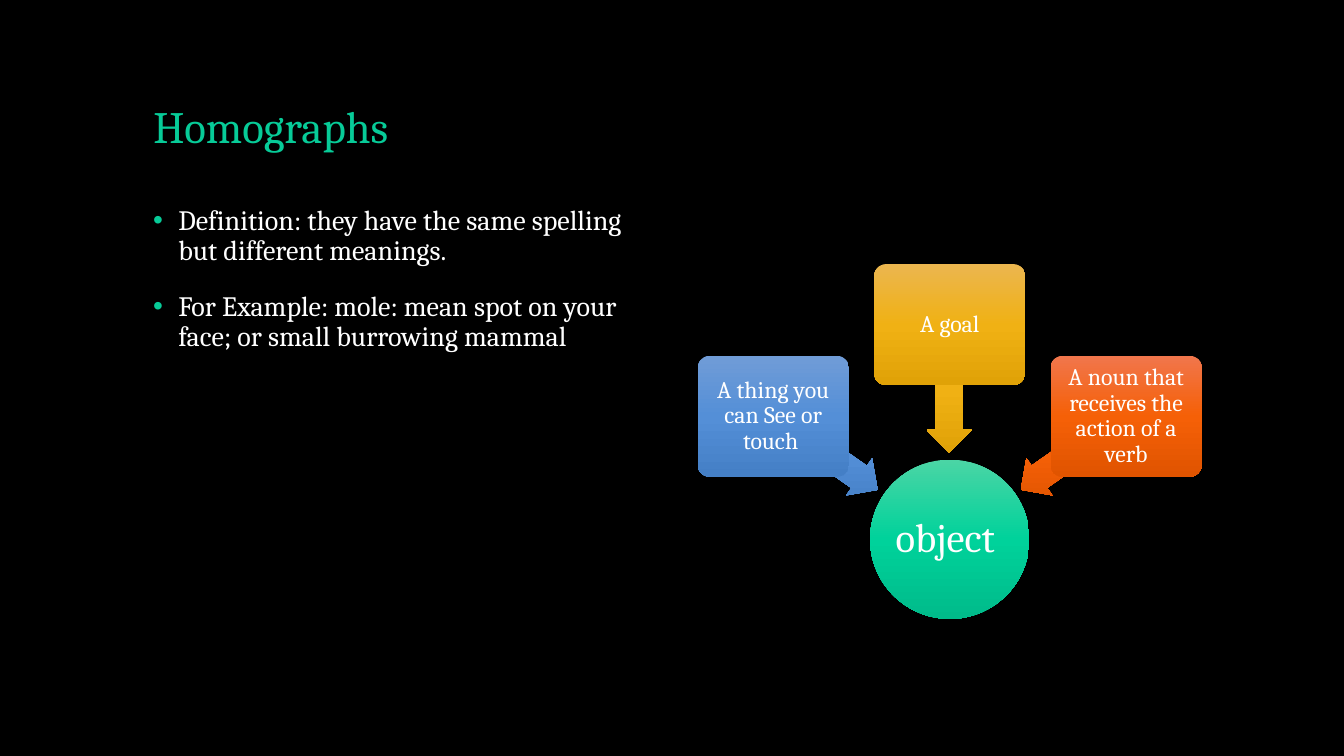
from dataclasses import dataclass

import pptx
import pptx.dml.color
import pptx.enum.shapes
import pptx.enum.text
import pptx.oxml
import pptx.oxml.ns
import pptx.util
from pptx.enum.shapes import MSO_SHAPE
from pptx.enum.text import MSO_ANCHOR, PP_ALIGN

PX = 9144  # 100 px to the inch
FONT = "Cambria"
COLORS = {"background": "000000", "accent": "07CB98", "text": "FFFFFF"}
# Top, middle and bottom colour of each gradient
GRADIENTS = {
    "green": ("4BD5A5", "00D29B", "00BB8A"),
    "blue": ("709CD7", "548FD7", "447FC6"),
    "gold": ("EBB64F", "F0B114", "E0A207"),
    "orange": ("F1764C", "F56007", "E05400"),
}


@dataclass(frozen=True)
class Meaning:
    text: str
    gradient: str
    box_top: int
    arrow_top: int
    arrow_angle: int


MEANINGS = [
    Meaning("A thing you can See or touch ", "blue", 353, 427, 215),
    Meaning("A goal", "gold", 262, 363, 270),
    Meaning("A noun that receives the action of a verb", "orange", 353, 427, 325),
]
BOX_LEFT, BOX_STEP = 692, 175
ARROW_LEFT, ARROW_STEP = 755, 123


def rgb(name: str) -> pptx.dml.color.RGBColor:
    return pptx.dml.color.RGBColor.from_string(COLORS[name])


def px(*lengths: int) -> list[int]:
    return [length * PX for length in lengths]


def add_bullet(paragraph) -> None:
    properties = paragraph._p.get_or_add_pPr()
    properties.set("marL", str(25 * PX))
    properties.set("indent", str(-25 * PX))
    ns = pptx.oxml.ns.nsdecls("a")
    for xml in (
        f'<a:buClr {ns}><a:srgbClr val="{COLORS["accent"]}"/></a:buClr>',
        f'<a:buFont {ns} typeface="Arial"/>',
        f'<a:buChar {ns} char="•"/>',
    ):
        properties.append(pptx.oxml.parse_xml(xml))


def write(shape, *texts: str, size: int, color: str = "text",
          align=PP_ALIGN.LEFT, anchor=MSO_ANCHOR.TOP, inset: int | None = None,
          bullets: bool = False, gap: int = 0) -> None:
    frame = shape.text_frame
    frame.word_wrap = True
    frame.auto_size = pptx.enum.text.MSO_AUTO_SIZE.NONE
    frame.vertical_anchor = anchor
    if inset is not None:
        frame.margin_left = frame.margin_right = inset * PX
        frame.margin_top = frame.margin_bottom = inset * PX
    for index, text in enumerate(texts):
        paragraph = frame.add_paragraph() if index else frame.paragraphs[0]
        if bullets:
            add_bullet(paragraph)
        paragraph.alignment = align
        paragraph.line_spacing = 0.9
        if index:
            paragraph.space_before = pptx.util.Pt(gap)
        run = paragraph.add_run()
        run.text = text
        run.font.name = FONT
        run.font.size = pptx.util.Pt(size)
        run.font.color.rgb = rgb(color)


def add_gradient_shape(slide, kind: MSO_SHAPE, left: int, top: int, width: int,
                       height: int, gradient: str, adjustments: tuple = (),
                       angle: int = 0):
    shape = slide.shapes.add_shape(kind, *px(left, top, width, height))
    shape.shadow.inherit = False
    shape.line.fill.background()
    shape.rotation = angle
    for index, value in enumerate(adjustments):
        shape.adjustments[index] = value
    # Three stops, running down the slide whatever the shape's rotation
    stops = "".join(
        f'<a:gs pos="{index * 50000}"><a:srgbClr val="{color}"/></a:gs>'
        for index, color in enumerate(GRADIENTS[gradient])
    )
    shape.fill.gradient()
    fill = shape._element.spPr.find(pptx.oxml.ns.qn("a:gradFill"))
    fill.getparent().replace(fill, pptx.oxml.parse_xml(
        f'<a:gradFill {pptx.oxml.ns.nsdecls("a")} rotWithShape="0">'
        f'<a:gsLst>{stops}</a:gsLst><a:lin ang="5400000" scaled="0"/></a:gradFill>'
    ))
    return shape


def main() -> None:
    deck = pptx.Presentation()
    deck.slide_width, deck.slide_height = px(1333, 750)
    slide = deck.slides.add_slide(deck.slide_layouts.get_by_name("Title Only"))
    slide.background.fill.solid()
    slide.background.fill.fore_color.rgb = rgb("background")

    # Title
    title = slide.shapes.title
    title.left, title.top, title.width, title.height = px(142, 40, 1050, 117)
    write(title, "Homographs", size=32, color="accent", anchor=MSO_ANCHOR.BOTTOM)

    # Definition and example
    definition = slide.shapes.add_textbox(*px(142, 200, 500, 476))
    write(definition,
          "Definition: they have the same spelling but different meanings.",
          "For Example: mole: mean spot on your face; or small burrowing mammal",
          size=20, bullets=True, gap=18)

    # The word in the middle
    word = add_gradient_shape(slide, MSO_SHAPE.OVAL, 863, 456, 158, 158, "green")
    write(word, "object ", size=29, align=PP_ALIGN.CENTER,
          anchor=MSO_ANCHOR.MIDDLE, inset=2)

    # Its meanings, each with an arrow to the word
    for index, meaning in enumerate(MEANINGS):
        add_gradient_shape(slide, MSO_SHAPE.LEFT_ARROW,
                           ARROW_LEFT + index * ARROW_STEP, meaning.arrow_top,
                           127, 45, meaning.gradient, (0.6, 0.5),
                           meaning.arrow_angle)
        box = add_gradient_shape(slide, MSO_SHAPE.ROUNDED_RECTANGLE,
                                 BOX_LEFT + index * BOX_STEP, meaning.box_top,
                                 150, 120, meaning.gradient, (0.1,))
        write(box, meaning.text, size=17, align=PP_ALIGN.CENTER,
              anchor=MSO_ANCHOR.MIDDLE, inset=4)

    deck.save("out.pptx")


if __name__ == "__main__":
    main()
